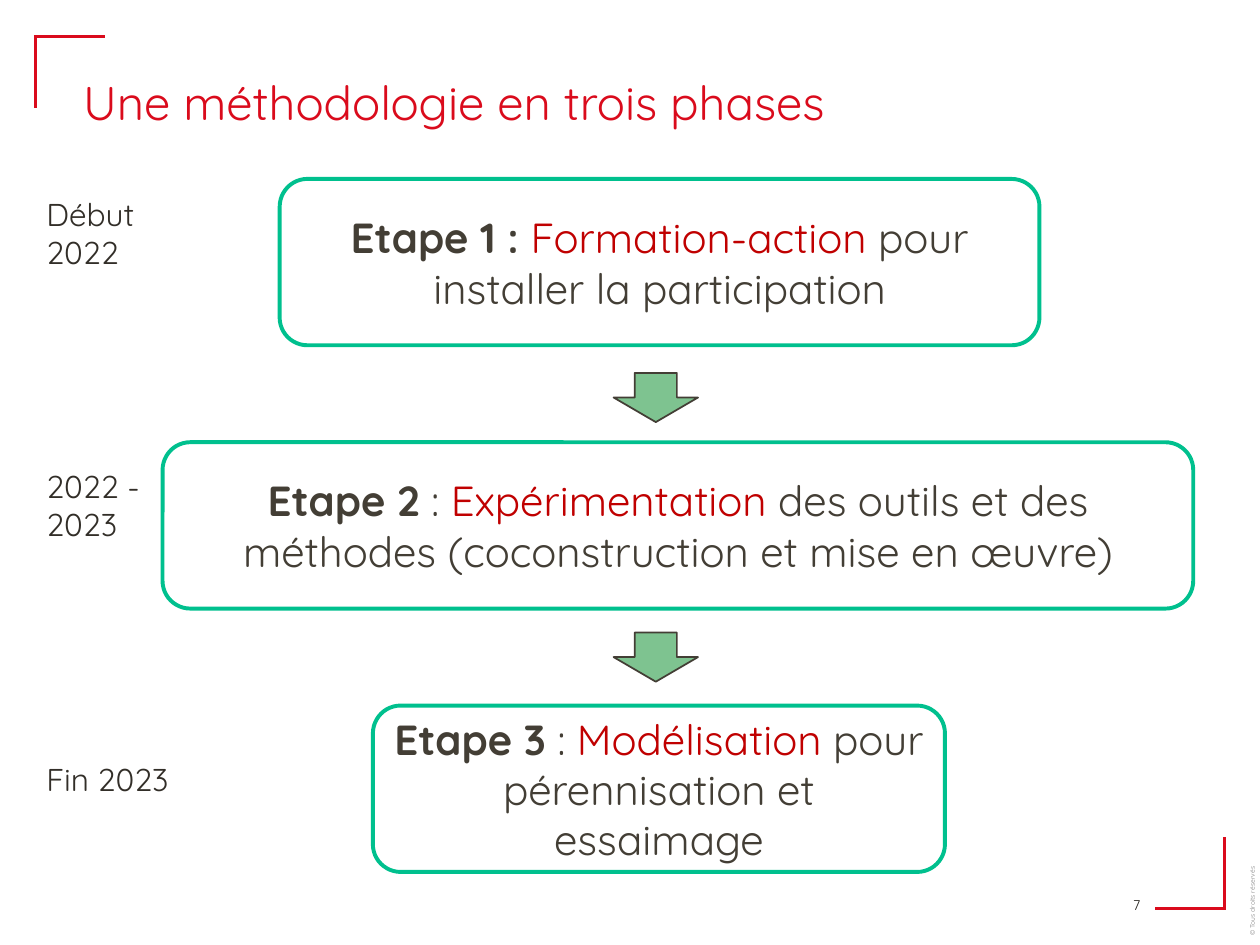
from lxml import etree
from pptx import Presentation
from pptx.dml.color import RGBColor
from pptx.enum.shapes import MSO_CONNECTOR, MSO_SHAPE
from pptx.enum.text import MSO_ANCHOR, PP_ALIGN
from pptx.oxml.ns import qn
from pptx.util import Inches, Pt

ROUNDED, DOWN_ARROW = MSO_SHAPE.ROUNDED_RECTANGLE, MSO_SHAPE.DOWN_ARROW
STRAIGHT = MSO_CONNECTOR.STRAIGHT
TOP, MIDDLE, BOTTOM = MSO_ANCHOR.TOP, MSO_ANCHOR.MIDDLE, MSO_ANCHOR.BOTTOM
LEFT, CENTER, RIGHT = PP_ALIGN.LEFT, PP_ALIGN.CENTER, PP_ALIGN.RIGHT
TITLE_ONLY = 5
COLUMNS, ROWS = 100, 75


def color(hex_value):
    return RGBColor.from_string(hex_value)


class PhaseSlide:
    FONT = "Quicksand"
    RED, GREEN, LEAF = "DA0B1C", "00C08E", "7EC390"
    INK, ACCENT, DATE = "433E35", "C00000", "322E28"

    def __init__(self, deck):
        self.column = deck.slide_width / COLUMNS
        self.row = deck.slide_height / ROWS
        self.slide = deck.slides.add_slide(deck.slide_layouts[TITLE_ONLY])

    def place(self, left, top, width, height):
        return (round(left * self.column), round(top * self.row),
                round(width * self.column), round(height * self.row))

    def fill_frame(self, frame, runs, size, ink, align=LEFT, anchor=TOP):
        """Fill a frame with one paragraph of (text, bold, colour) runs."""
        frame.word_wrap = True
        frame.vertical_anchor = anchor
        paragraph = frame.paragraphs[0]
        paragraph.alignment = align
        paragraph.font.name = self.FONT
        paragraph.font.size = Pt(size)
        paragraph.font.color.rgb = color(ink)
        for words, bold, run_ink in runs:
            run = paragraph.add_run()
            run.text = words
            if bold:
                run.font.bold = True
            if run_ink != ink:
                run.font.color.rgb = color(run_ink)
        return paragraph

    def title(self, words, box):
        title = self.slide.shapes.title
        title.left, title.top, title.width, title.height = self.place(*box)
        paragraph = self.fill_frame(title.text_frame, [(words, False, self.RED)],
                                    27, self.RED)
        paragraph.line_spacing = 0.9

    def text(self, words, box, size, ink, align=LEFT, anchor=TOP):
        label = self.slide.shapes.add_textbox(*self.place(*box))
        self.fill_frame(label.text_frame, [(words, False, ink)], size, ink, align, anchor)
        return label

    def side_note(self, words, box):
        note = self.text(words, box, 3.8, "7F7F7F")
        note.rotation = 270
        frame = note.text_frame
        frame.margin_left = frame.margin_right = Inches(0.07)
        frame.margin_top = frame.margin_bottom = Inches(0.04)

    def shape(self, preset, box, fill, outline, weight):
        shape = self.slide.shapes.add_shape(preset, *self.place(*box))
        shape.shadow.inherit = False
        shape.fill.solid()
        shape.fill.fore_color.rgb = color(fill)
        shape.line.color.rgb = color(outline)
        shape.line.width = Pt(weight)
        return shape

    def step(self, box, lead, colon, focus, rest):
        step = self.shape(ROUNDED, box, "FFFFFF", self.GREEN, 2.25)
        runs = [(lead, True, self.INK), (colon, False, self.INK),
                (focus, False, self.ACCENT), (rest, False, self.INK)]
        self.fill_frame(step.text_frame, [run for run in runs if run[0]],
                        24, self.INK, CENTER, MIDDLE)

    def arrow(self, box):
        self.shape(DOWN_ARROW, box, self.LEAF, self.INK, 1)

    def line(self, x1, y1, x2, y2):
        start_x, start_y, end_x, end_y = self.place(x1, y1, x2, y2)
        line = self.slide.shapes.add_connector(STRAIGHT, start_x, start_y, end_x, end_y)
        line.line.color.rgb = color(self.RED)
        line.line.width = Pt(2)
        etree.SubElement(line._element.spPr, qn("a:effectLst"))

    def corner(self, x, y, direction):
        """Draw a bracket whose arms run right and down (1) or left and up (-1)."""
        arm = 5.7 * direction
        self.line(x - 0.1 * direction, y, x + arm - 0.2 * direction, y)
        self.line(x, y, x, y + arm)


def main():
    deck = Presentation()
    deck.slide_width, deck.slide_height = Inches(10), Inches(7.5)
    page = PhaseSlide(deck)

    # Corner brackets, title and footer
    page.corner(97.2, 72.1, -1)
    page.corner(2.8, 2.9, 1)
    page.side_note("© Tous droits réservés", (94.6, 69.8, 9.3, 1))
    page.title("Une méthodologie en trois phases", (5.6, 5.8, 88.6, 9.4))
    page.text("7", (85.9, 69.3, 5.6, 3.7), 8, "221F1A", RIGHT, BOTTOM)

    # Steps, evenly spaced down the slide
    steps = [
        (22.2, 60.3, "Etape 1 : ", "", "Formation-action",
         " pour installer la participation"),
        (12.9, 81.8, "Etape 2 ", ": ", "Expérimentation",
         " des outils et des méthodes (coconstruction et mise en œuvre)"),
        (29.6, 45.4, "Etape 3 ", ": ", "Modélisation",
         " pour pérennisation et essaimage"),
    ]
    for index, (left, width, *wording) in enumerate(steps):
        page.step((left, 14.2 + 20.9 * index, width, 13.2), *wording)

    # Arrows between the steps
    for index in range(len(steps) - 1):
        page.arrow((48.7, 29.6 + 20.6 * index, 6.7, 3.9))

    # Dates beside the steps
    dates = [("Début 2022", 15, 7.1), ("2022 - 2023", 36.6, 7.1), ("Fin 2023", 59.8, 4)]
    for date, top, height in dates:
        page.text(date, (2.7, top, 14.4, height), 18, page.DATE)

    deck.save("out.pptx")


if __name__ == "__main__":
    main()
